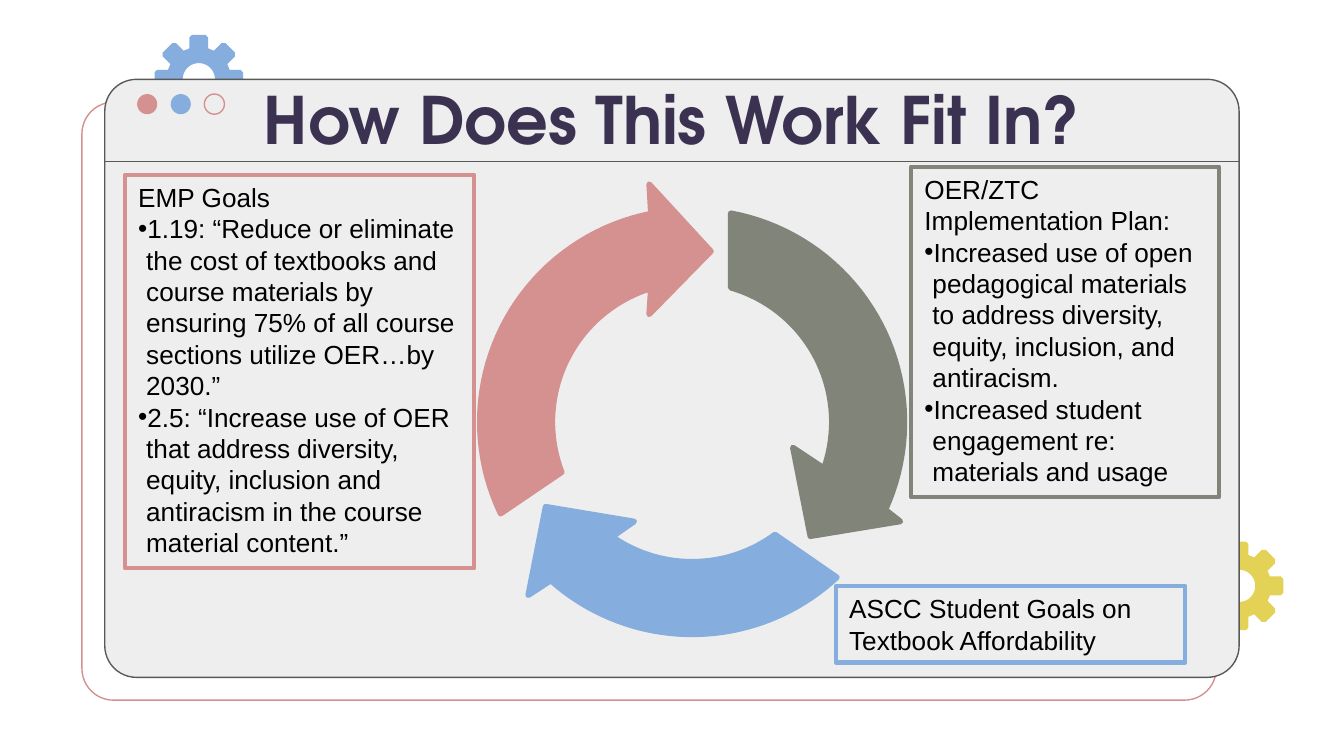
from dataclasses import dataclass
from math import cos, pi, radians, sin, sqrt

from lxml import etree
from pptx import Presentation
from pptx import util as u
from pptx.dml.color import RGBColor
from pptx.enum import shapes, text
from pptx.oxml.ns import qn


@dataclass(frozen=True)
class Theme:
    rose: str = "D59090"
    blue: str = "85ADDE"
    olive: str = "818479"
    yellow: str = "E4D256"
    card: str = "EEEEEE"
    outline: str = "595959"
    title: str = "3B3252"
    body: str = "000000"
    title_font: str = "TeX Gyre Adventor"
    body_font: str = "Arial"
    title_size: int = 35
    body_size: int = 14
    thin: float = 0.75
    frame: float = 2.25
    thick: float = 3


THEME = Theme()
SLIDE_SIZE = (10, 10 * 9 / 16)
CARD = (0.78, 0.59, 8.44, 4.45)
CARD_OFFSET = 0.17
HEADER_HEIGHT = 0.61
TITLE = "How Does This Work Fit In?"

GEARS = [((9.22, 4.36), THEME.yellow), ((1.48, 0.59), THEME.blue)]
GEAR_HOLE, GEAR_RIM, GEAR_REACH, TOOTH_HALF = 0.12, 0.24, 0.33, 0.07

DOT_SIZE, DOT_STEP, DOT_START = 0.15, 0.25, (1.02, 0.7)
DOTS = [(THEME.rose, None), (THEME.blue, None), (None, THEME.rose)]

CYCLE_CENTER, CYCLE_OUTER, CYCLE_INNER = (5.15, 3.14), 1.58, 1.04
CYCLE = [
    dict(color=THEME.rose, outer=(154.4, 258.8), inner=(252.8, 158.9),
         head=[(4.83, 1.37), (5.29, 1.87), (4.83, 2.34)]),
    dict(color=THEME.olive, outer=(-79.5, 24.4), inner=(19.3, -74),
         head=[(6.7, 3.88), (6.03, 3.99), (5.9, 3.33)]),
    dict(color=THEME.blue, outer=(47, 131.7), inner=(124.8, 53.6),
         head=[(3.93, 4.43), (4.06, 3.77), (4.72, 3.88)]),
]

PANELS = [
    (THEME.rose, (0.93, 1.3, 2.6, 2.93), "EMP Goals", [
        "1.19: “Reduce or eliminate the cost of textbooks and course materials "
        "by ensuring 75% of all course sections utilize OER…by 2030.”",
        "2.5: “Increase use of OER that address diversity, equity, inclusion "
        "and antiracism in the course material content.”"]),
    (THEME.olive, (6.78, 1.24, 2.29, 2.46), "OER/ZTC Implementation Plan:", [
        "Increased use of open pedagogical materials to address diversity, "
        "equity, inclusion, and antiracism.",
        "Increased student engagement re: materials and usage"]),
    (THEME.blue, (6.22, 4.36, 2.6, 0.57),
     "ASCC Student Goals on Textbook Affordability", []),
]


def inches(values):
    return [u.Inches(value) for value in values]


def paint(shape, fill=None, line=None, width=THEME.thin):
    shape.shadow.inherit = False
    if fill:
        shape.fill.solid()
        shape.fill.fore_color.rgb = RGBColor.from_string(fill)
    else:
        shape.fill.background()
    if line:
        shape.line.color.rgb = RGBColor.from_string(line)
        shape.line.width = u.Pt(width)
    else:
        shape.line.fill.background()


def add_box(slide, kind, box, **style):
    shape = slide.shapes.add_shape(kind, *inches(box))
    paint(shape, **style)
    return shape


def add_outline(slide, contours, **style):
    first, *others = [[inches(point) for point in contour] for contour in contours]
    builder = slide.shapes.build_freeform(*first[0], scale=1.0)
    builder.add_line_segments(first[1:], close=True)
    for contour in others:
        builder.move_to(*contour[0])
        builder.add_line_segments(contour[1:], close=True)
    paint(builder.convert_to_shape(), **style)


def arc(center, radius, start, end, steps=40):
    angles = [radians(start + (end - start) * i / steps) for i in range(steps + 1)]
    return [(center[0] + radius * cos(a), center[1] + radius * sin(a)) for a in angles]


def add_gear(slide, center, color):
    base = sqrt(GEAR_RIM ** 2 - TOOTH_HALF ** 2)
    tooth = [(base, -TOOTH_HALF), (GEAR_REACH - 0.02, -TOOTH_HALF),
             (GEAR_REACH, -TOOTH_HALF + 0.02), (GEAR_REACH, TOOTH_HALF - 0.02),
             (GEAR_REACH - 0.02, TOOTH_HALF), (base, TOOTH_HALF)]
    rim = [(center[0] + x * cos(a) - y * sin(a), center[1] + x * sin(a) + y * cos(a))
           for a in (i * pi / 4 for i in range(8)) for x, y in tooth]
    add_outline(slide, [rim, arc(center, GEAR_HOLE, 360, 0)], fill=color)


def add_card(slide):
    left, top, width, height = CARD
    back = (left - CARD_OFFSET, top + CARD_OFFSET, width, height)
    for box, fill, line in [(back, None, THEME.rose), (CARD, THEME.card, THEME.outline)]:
        card = add_box(slide, shapes.MSO_SHAPE.ROUNDED_RECTANGLE, box, fill=fill, line=line)
        card.adjustments[0] = 0.053
    for column, (fill, line) in enumerate(DOTS):
        box = (DOT_START[0] + column * DOT_STEP, DOT_START[1], DOT_SIZE, DOT_SIZE)
        add_box(slide, shapes.MSO_SHAPE.OVAL, box, fill=fill, line=line)
    rule = top + HEADER_HEIGHT
    divider = slide.shapes.add_connector(
        shapes.MSO_CONNECTOR.STRAIGHT, *inches((left, rule, left + width, rule)))
    divider.line.color.rgb = RGBColor.from_string(THEME.outline)
    divider.line.width = u.Pt(THEME.thin)
    etree.SubElement(divider.element.spPr, qn("a:effectLst"))


def style_font(font, name, size, color):
    font.name, font.size = name, u.Pt(size)
    font.color.rgb = RGBColor.from_string(color)


def add_title(slide):
    title = slide.shapes.title
    title.left, title.top, title.width, title.height = inches((*CARD[:3], HEADER_HEIGHT))
    frame = title.text_frame
    frame.text = TITLE
    frame.word_wrap = True
    frame.auto_size = text.MSO_AUTO_SIZE.NONE
    frame.vertical_anchor = text.MSO_ANCHOR.TOP
    frame.margin_left = frame.margin_right = frame.margin_top = frame.margin_bottom = 0
    paragraph = frame.paragraphs[0]
    paragraph.alignment = text.PP_ALIGN.CENTER
    style_font(paragraph.font, THEME.title_font, THEME.title_size, THEME.title)
    paragraph.font.bold = True
    slide.shapes._spTree.append(title.element)


def add_bullet(paragraph):
    properties = paragraph._p.get_or_add_pPr()
    properties.set("marL", str(u.Inches(0.06)))
    properties.set("indent", str(-u.Inches(0.06)))
    properties.insert(0, etree.Element(qn("a:buFont"), typeface=THEME.body_font))
    properties.insert(1, etree.Element(qn("a:buChar"), char="•"))


def add_panel(slide, color, box, heading, items):
    panel = add_box(slide, shapes.MSO_SHAPE.RECTANGLE, box, line=color, width=THEME.frame)
    frame = panel.text_frame
    frame.word_wrap = True
    frame.auto_size = text.MSO_AUTO_SIZE.SHAPE_TO_FIT_TEXT
    frame.vertical_anchor = text.MSO_ANCHOR.TOP
    for index, content in enumerate([heading, *items]):
        paragraph = frame.add_paragraph() if index else frame.paragraphs[0]
        paragraph.text = content
        paragraph.alignment = text.PP_ALIGN.LEFT
        if index:
            add_bullet(paragraph)
        style_font(paragraph.font, THEME.body_font, THEME.body_size, THEME.body)


def main():
    presentation = Presentation()
    presentation.slide_width, presentation.slide_height = inches(SLIDE_SIZE)
    slide = presentation.slides.add_slide(presentation.slide_layouts[5])
    for center, color in GEARS:
        add_gear(slide, center, color)
    add_card(slide)
    add_title(slide)
    for arrow in CYCLE:
        outline = (arc(CYCLE_CENTER, CYCLE_OUTER, *arrow["outer"]) + arrow["head"]
                   + arc(CYCLE_CENTER, CYCLE_INNER, *arrow["inner"]))
        add_outline(slide, [outline], fill=arrow["color"], line=arrow["color"],
                    width=THEME.thick)
    for panel in PANELS:
        add_panel(slide, *panel)
    presentation.save("out.pptx")


if __name__ == "__main__":
    main()
